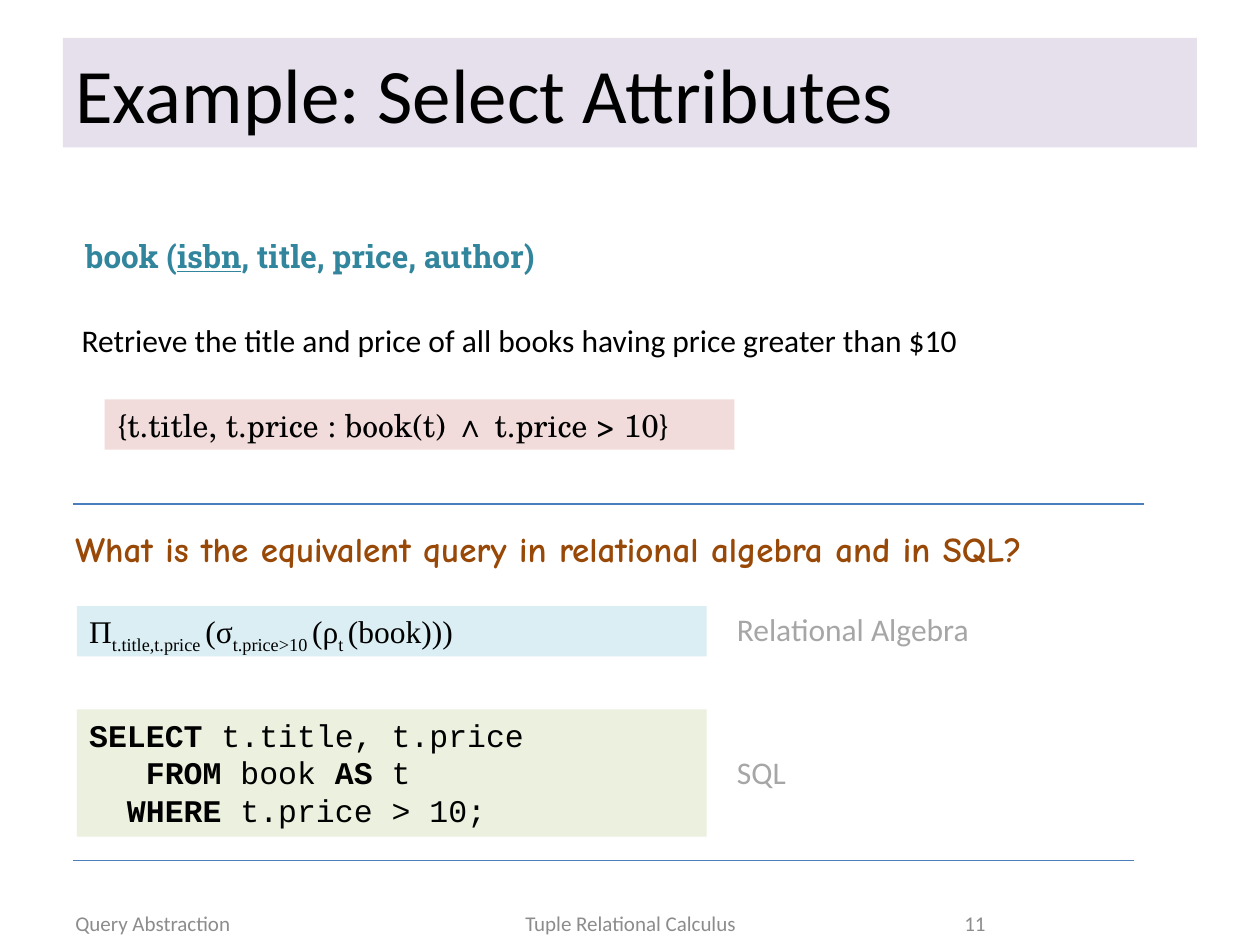
import pptx
import pptx.dml.color
import pptx.enum.shapes
import pptx.enum.text
import pptx.oxml.ns
import pptx.util
from lxml import etree

WIDTH = pptx.util.Inches(10)
HEIGHT = pptx.util.Inches(7.5)
ALIGN = pptx.enum.text.PP_ALIGN
ANCHOR = pptx.enum.text.MSO_ANCHOR

LINE_HEIGHT = 5.33
PANEL_WIDTH = 50
PANEL_LEFT = 6.1
FOOTER_TOP = 95.6
FOOTER_HEIGHT = 4.13
GREY = "A6A6A6"


def color(value):
    return pptx.dml.color.RGBColor.from_string(value)


def across(share):
    return int(WIDTH * share / 100)


def down(share):
    return int(HEIGHT * share / 100)


def place(left, top, width, height):
    return across(left), down(top), across(width), down(height)


def add_span(para, text, style, font, size, ink):
    span = para.add_run()
    span.text = text
    span.font.name = font
    span.font.size = pptx.util.Pt(size)
    span.font.color.rgb = color(ink)
    if style == "bold":
        span.font.bold = True
    elif style == "key":
        span.font.bold = True
        span.font.underline = True
    elif style == "sub":
        span.font._element.set("baseline", "-25000")


def write(box, lines, font, size, ink="000000", align=ALIGN.LEFT,
          anchor=ANCHOR.TOP, wrap=True):
    frame = box.text_frame
    frame.word_wrap = wrap
    frame.vertical_anchor = anchor
    for number, spans in enumerate(lines):
        para = frame.add_paragraph() if number else frame.paragraphs[0]
        para.alignment = align
        for text, style in spans:
            add_span(para, text, style, font, size, ink)


def add_text(page, area, lines, font, size, ink="000000", **layout):
    box = page.shapes.add_textbox(*place(*area))
    write(box, lines, font, size, ink, **layout)


def add_panel(page, area, fill, lines, font, size, **layout):
    box = page.shapes.add_shape(
        pptx.enum.shapes.MSO_SHAPE.RECTANGLE, *place(*area))
    box.shadow.inherit = False
    box.fill.solid()
    box.fill.fore_color.rgb = color(fill)
    box.line.fill.background()
    write(box, lines, font, size, **layout)


def add_rule(page, left, right, top):
    rule = page.shapes.add_connector(
        pptx.enum.shapes.MSO_CONNECTOR.STRAIGHT,
        across(left), down(top), across(right), down(top))
    rule.line.color.rgb = color("4B7EBC")
    rule.line.width = pptx.util.Pt(0.75)
    etree.SubElement(rule._element.spPr, pptx.oxml.ns.qn("a:effectLst"))


def plain(text):
    return [[(text, "")]]


def add_footer(page):
    for left, width, text, align in (
            (5, 23.3, "Query Abstraction", ALIGN.LEFT),
            (34.2, 31.7, "Tuple Relational Calculus", ALIGN.CENTER),
            (71.7, 7.5, "11", ALIGN.RIGHT)):
        add_text(page, (left, FOOTER_TOP, width, FOOTER_HEIGHT), plain(text),
                 "Calibri", 12, "8C8C8C", align=align, anchor=ANCHOR.MIDDLE)


def add_question(page):
    schema = [[("book (", "bold"), ("isbn", "key"),
               (", title, price, author)", "bold")]]
    add_text(page, (5.8, 24.4, 42.3, LINE_HEIGHT), schema,
             "Roboto Slab", 18, "31859C", wrap=False)
    add_text(page, (5.5, 33.33, 75.4, LINE_HEIGHT),
             plain("Retrieve the title and price of all books "
                   "having price greater than $10"), "Calibri", 18)
    add_panel(page, (8.3, 42.27, PANEL_WIDTH, LINE_HEIGHT), "F2DCDB",
              plain("{t.title, t.price : book(t) ∧ t.price > 10}"),
              "TeX Gyre Schola", 18)


def add_answers(page):
    prompt = "What is the equivalent query in relational algebra and in SQL?"
    add_text(page, (5, 55.2, 89.1, 5.87), [[(prompt, "bold")]],
             "Comic Neue", 20, "984807")
    algebra = [[("Π", ""), ("t.title,t.price ", "sub"),
                ("(σ", ""), ("t.price>10 ", "sub"),
                ("(ρ", ""), ("t ", "sub"), ("(book)))", "")]]
    add_panel(page, (PANEL_LEFT, 64.13, PANEL_WIDTH, LINE_HEIGHT), "DBEEF4",
              algebra, "Times New Roman", 18)
    query = [[("SELECT", "bold"), (" t.title, t.price", "")],
             [("   ", ""), ("FROM", "bold"), (" book ", ""),
              ("AS", "bold"), (" t", "")],
             [("  ", ""), ("WHERE", "bold"), (" t.price > 10;", "")]]
    add_panel(page, (PANEL_LEFT, 75.07, PANEL_WIDTH, 13.47), "EBF1DE",
              query, "Courier New", 18)
    for top, width, label in ((63.87, 20.7, "Relational Algebra"),
                              (79.07, 5.9, "SQL")):
        add_text(page, (57.5, top, width, LINE_HEIGHT), plain(label),
                 "Calibri", 18, GREY, wrap=False)


def main():
    deck = pptx.Presentation()
    deck.slide_width = WIDTH
    deck.slide_height = HEIGHT
    page = deck.slides.add_slide(deck.slide_layouts[6])
    add_panel(page, (5, 4, 90, 11.6), "E6E0EC",
              plain("Example: Select Attributes"), "Calibri", 44,
              anchor=ANCHOR.MIDDLE)
    add_footer(page)
    add_question(page)
    add_rule(page, 5.8, 90.8, 53.33)
    add_answers(page)
    add_rule(page, 5.8, 90, 91.07)
    deck.save("out.pptx")


if __name__ == "__main__":
    main()
